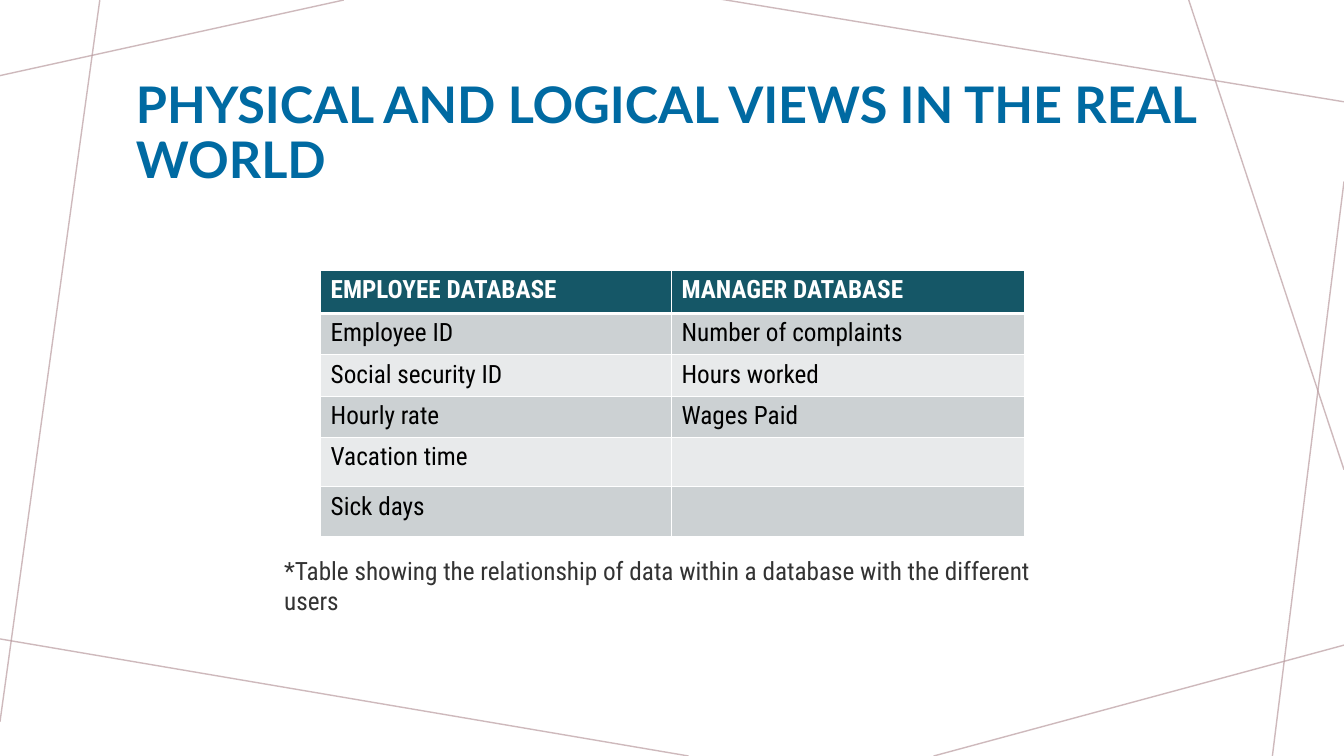
from lxml.etree import SubElement
from pptx import Presentation
from pptx.dml.color import RGBColor
from pptx.enum.shapes import MSO_CONNECTOR as CONN
from pptx.enum.text import MSO_ANCHOR as ANCHOR
from pptx.oxml.ns import qn
from pptx.util import Emu, Pt

SCALE = 9144  # EMU per px, 100 px to the inch
WIDTH, HEIGHT = 1333, 750
BODY_FONT = "Roboto Condensed"
HEADER_FILL, BANDS = "155767", ("CCD1D3", "E8EAEB")

FRAME_LINES = [
    (341, 0, 0, 75), (99, 0, 0, 716), (683, 750, -5, 633),
    (1333, 640, 926, 750), (1333, 180, 1262, 750),
    (1333, 466, 1179, 0), (1333, 101, 714, -1),
]
COLUMN_WIDTHS = (348, 350)
ROW_HEIGHTS = (43, 41, 41, 41, 49, 49)
ROWS = [
    ("EMPLOYEE DATABASE", "MANAGER DATABASE"),
    ("Employee ID", "Number of complaints"),
    ("Social security ID", "Hours worked"),
    ("Hourly rate", "Wages Paid"),
    ("Vacation time", ""),
    ("Sick days", ""),
]


def px(n):
    return Emu(n * SCALE)


def rgb(value):
    return RGBColor.from_string(value)


def write(tf, text, font=BODY_FONT, size=18, color="000000", bold=False, spacing=None):
    p = tf.paragraphs[0]
    p.line_spacing = spacing
    r = p.add_run()
    r.text = text
    r.font.name, r.font.size, r.font.bold = font, Pt(size), bold
    r.font.color.rgb = rgb(color)


def add_text(slide, box, text, anchor=ANCHOR.TOP, **fmt):
    tf = slide.shapes.add_textbox(*map(px, box)).text_frame
    tf.word_wrap = True
    tf.vertical_anchor = anchor
    write(tf, text, **fmt)


def add_frame(slide):
    for x1, y1, x2, y2 in FRAME_LINES:
        s = slide.shapes.add_connector(CONN.STRAIGHT, px(x1), px(y1), px(x2), px(y2))
        s.line.width = Pt(1)
        s.line.color.rgb = rgb("BA9CA0")
        # 70 % opacity, no shadow
        color = s.line.fill._xPr.find(qn("a:solidFill"))[0]
        SubElement(color, qn("a:alpha"), val="70000")
        SubElement(s._element.spPr, qn("a:effectLst"))


def set_border(cell, side, width, color="FFFFFF"):
    tc_pr = cell._tc.get_or_add_tcPr()
    ln = SubElement(tc_pr, qn(f"a:ln{side}"), w=str(Pt(width)))
    fill = SubElement(ln, qn("a:solidFill"))
    SubElement(fill, qn("a:srgbClr"), val=color)


def add_databases_table(slide, box):
    table = slide.shapes.add_table(len(ROWS), len(COLUMN_WIDTHS), *map(px, box)).table
    for column, width in zip(table.columns, COLUMN_WIDTHS):
        column.width = px(width)
    for i, (row, texts) in enumerate(zip(table.rows, ROWS)):
        row.height = px(ROW_HEIGHTS[i])
        header = i == 0
        # Thick rule between header and body
        widths = {"L": 1, "R": 1, "T": 3 if i == 1 else 1, "B": 3 if header else 1}
        for cell, text in zip(row.cells, texts):
            for side, width in widths.items():
                set_border(cell, side, width)
            cell.fill.solid()
            cell.fill.fore_color.rgb = rgb(HEADER_FILL if header else BANDS[(i - 1) % 2])
            if text:
                write(cell.text_frame, text, bold=header,
                      color="FFFFFF" if header else "000000")
            else:
                cell.text_frame.paragraphs[0].font.size = Pt(18)


def add_table_slide(prs):
    slide = prs.slides.add_slide(prs.slide_layouts[6])
    add_frame(slide)
    # Title
    add_text(slide, (125, 58, 1083, 151), "PHYSICAL AND LOGICAL VIEWS IN THE REAL WORLD",
             anchor=ANCHOR.MIDDLE, font="Lato", size=36, color="006AA2", bold=True, spacing=0.9)
    add_databases_table(slide, (318, 268, sum(COLUMN_WIDTHS), sum(ROW_HEIGHTS)))
    # Footnote
    add_text(slide, (272, 546, 790, 71),
             "*Table showing the relationship of data within a database with the different users",
             color="333333")


def main():
    prs = Presentation()
    prs.slide_width, prs.slide_height = px(WIDTH), px(HEIGHT)
    add_table_slide(prs)
    prs.save("out.pptx")


if __name__ == "__main__":
    main()
